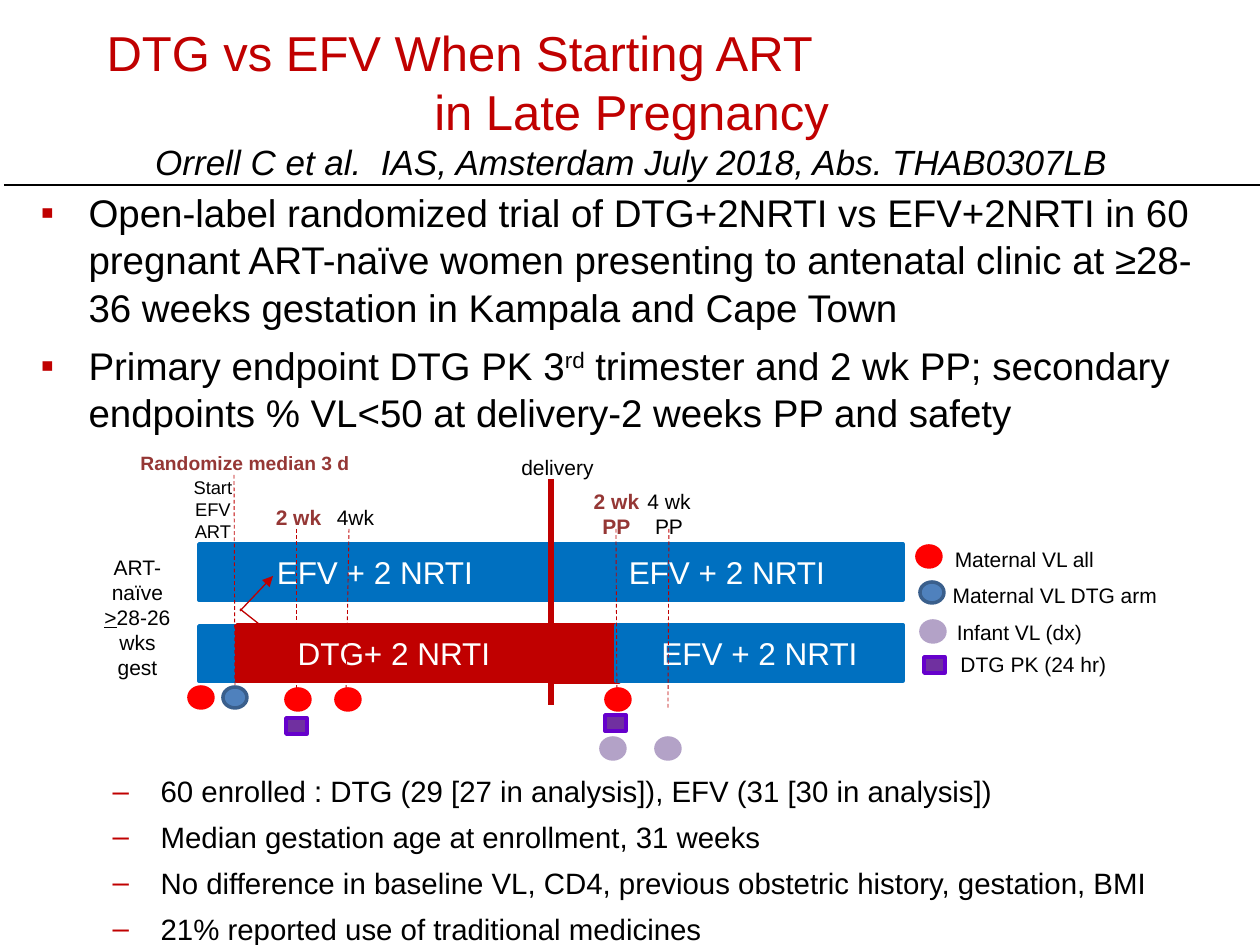
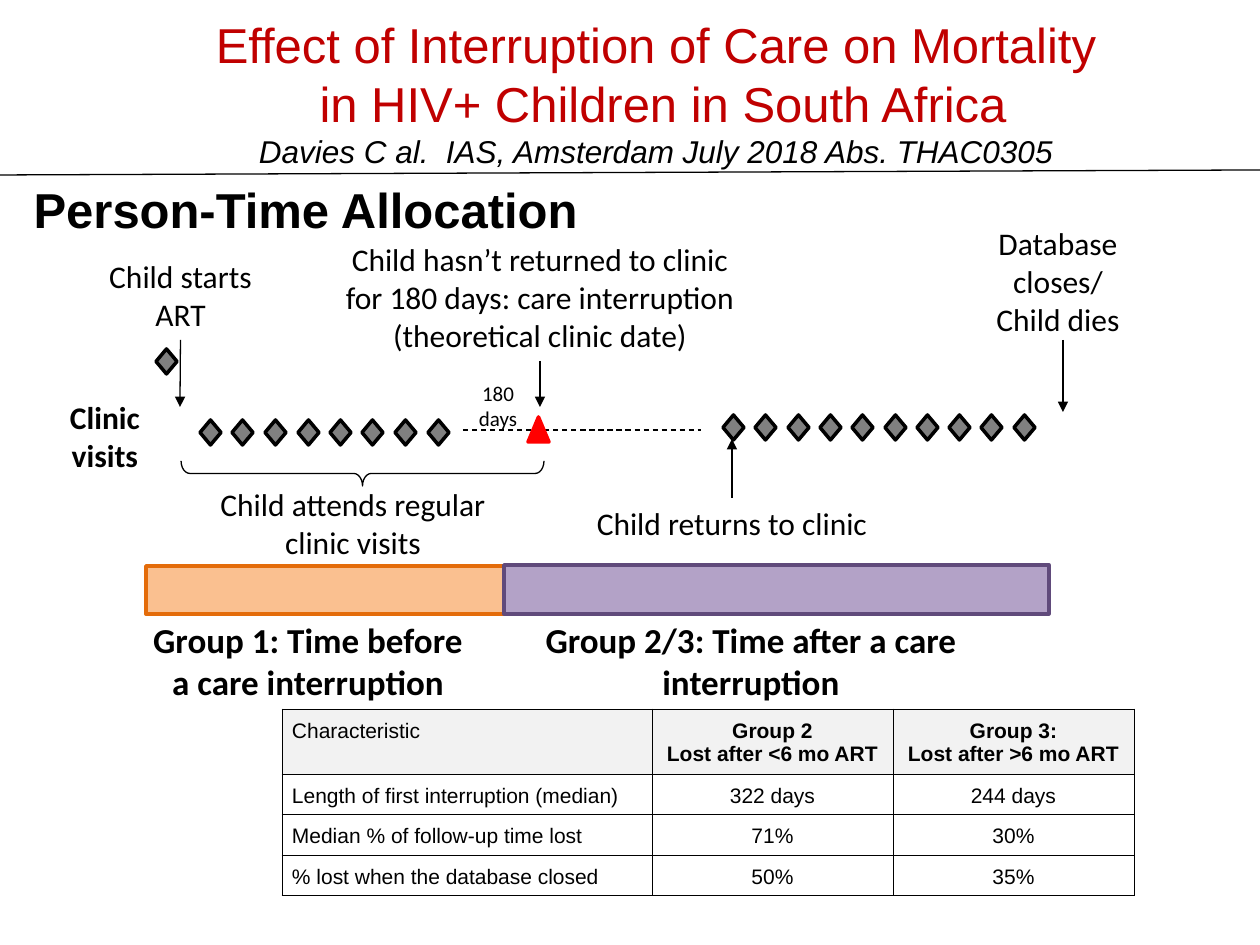
import copy
import lxml.etree
import pptx
import pptx.dml.color
import pptx.enum.dml
import pptx.enum.shapes
import pptx.enum.text
import pptx.oxml.ns
import pptx.util

PX = 7257
RED, BLUE, BLACK, WHITE = "C00000", "0070C0", "000000", "FFFFFF"
BRIGHT_RED, MAROON, LILAC, GREY = "FF0000", "953735", "B3A2C7", "808080"

qn = pptx.oxml.ns.qn
rgb = pptx.dml.color.RGBColor.from_string
ALIGN = pptx.enum.text.PP_ALIGN
MIDDLE = pptx.enum.text.MSO_ANCHOR.MIDDLE
TOP = pptx.enum.text.MSO_ANCHOR.TOP
SHAPE = pptx.enum.shapes.MSO_SHAPE
STRAIGHT = pptx.enum.shapes.MSO_CONNECTOR.STRAIGHT


def write(frame, text, size, color, font="Arial", bold=False, align=ALIGN.CENTER):
    frame.text = text
    for paragraph in frame.paragraphs:
        paragraph.alignment = align
        for run in paragraph.runs:
            run.font.name = font
            run.font.size = pptx.util.Pt(size)
            run.font.bold = bold
            run.font.color.rgb = rgb(color)


def add_shape(slide, kind, box, fill, line, width=2):
    shape = slide.shapes.add_shape(kind, *[value * PX for value in box])
    shape.shadow.inherit = False
    if fill:
        shape.fill.solid()
        shape.fill.fore_color.rgb = rgb(fill)
    else:
        shape.fill.background()
    shape.line.color.rgb = rgb(line)
    shape.line.width = pptx.util.Pt(width)
    return shape


presentation = pptx.Presentation()
presentation.slide_width = pptx.util.Inches(10)
presentation.slide_height = pptx.util.Inches(7.5)
trial = presentation.slides.add_slide(presentation.slide_layouts[3])
care = presentation.slides.add_slide(presentation.slide_layouts[5])

section = care.shapes.title
section.left, section.top, section.width, section.height = [v * PX for v in (-34, 130, 679, 158)]
write(section.text_frame, "Person-Time Allocation", 28, BLACK, bold=True)
care_header = care.shapes.add_textbox(0, 0, 0, 0)

headers = [
    (trial.shapes.title, (87, 11, 1082, 183), 20,
     "DTG vs EFV When Starting ART\nin Late Pregnancy\n"
     "Orrell C et al.  IAS, Amsterdam July 2018, Abs. THAB0307LB"),
    (care_header, (42, 13, 1228, 158), 18,
     "Effect of Interruption of Care on Mortality\nin HIV+ Children in South Africa\n"
     "Davies C al.  IAS, Amsterdam July 2018 Abs. THAC0305"),
]
for shape, box, citation_size, text in headers:
    shape.left, shape.top, shape.width, shape.height = [value * PX for value in box]
    write(shape.text_frame, text, 28, RED)
    citation = shape.text_frame.paragraphs[-1].runs[0]
    citation.font.size = pptx.util.Pt(citation_size)
    citation.font.italic = True
    citation.font.color.rgb = rgb(BLACK)
for shape in (section, trial.shapes.title, care_header):
    shape.text_frame.word_wrap = True
    shape.text_frame.auto_size = pptx.enum.text.MSO_AUTO_SIZE.NONE
    shape.text_frame.vertical_anchor = MIDDLE
first_line = trial.shapes.title.text_frame.paragraphs[0]
first_line.alignment = ALIGN.LEFT
first_line._p.get_or_add_pPr().set("marL", str(7 * PX))
care_header.text_frame.paragraphs[1]._p.get_or_add_pPr().set("marL", str(14 * PX))

lists = [
    (1, (28, 181, 1202, 286), 22, 1.03, "▪",
     "Open-label randomized trial of DTG+2NRTI vs EFV+2NRTI in 60 pregnant ART-naïve women "
     "presenting to antenatal clinic at ≥28-36 weeks gestation in Kampala and Cape Town\n"
     "Primary endpoint DTG PK 3rd trimester and 2 wk PP; secondary endpoints "
     "% VL<50 at delivery-2 weeks PP and safety"),
    (2, (100, 767, 1139, 164), 16.8, 1, "‒",
     "60 enrolled : DTG (29 [27 in analysis]), EFV (31 [30 in analysis])\n"
     "Median gestation age at enrollment, 31 weeks\n"
     "No difference in baseline VL, CD4, previous obstetric history, gestation, BMI\n"
     "21% reported use of traditional medicines"),
]
for index, box, size, spacing, bullet, text in lists:
    body = trial.placeholders[index]
    body.left, body.top, body.width, body.height = [value * PX for value in box]
    write(body.text_frame, text, size, BLACK, align=ALIGN.LEFT)
    body.text_frame.auto_size = pptx.enum.text.MSO_AUTO_SIZE.NONE
    for number, paragraph in enumerate(body.text_frame.paragraphs):
        properties = paragraph._p.get_or_add_pPr()
        properties.set("marL", str(48 * PX))
        properties.set("indent", str(-48 * PX))
        bullet_color = lxml.etree.SubElement(properties, qn("a:buClr"))
        lxml.etree.SubElement(bullet_color, qn("a:srgbClr")).set("val", RED)
        lxml.etree.SubElement(properties, qn("a:buFont")).set("typeface", "Arial")
        lxml.etree.SubElement(properties, qn("a:buChar")).set("char", bullet)
        paragraph.line_spacing = spacing
        paragraph.space_before = pptx.util.Pt(6 if number else 0)

bars = [
    (trial, (552, 625, 67, 57), RED, RED, ""),
    (trial, (199, 544, 352, 56), BLUE, BLUE, "EFV + 2 NRTI"),
    (trial, (551, 544, 352, 56), BLUE, BLUE, "EFV + 2 NRTI"),
    (trial, (199, 626, 38, 55), BLUE, BLUE, ""),
    (trial, (237, 625, 314, 56), RED, RED, "DTG+ 2 NRTI"),
    (trial, (616, 625, 287, 56), BLUE, BLUE, "EFV + 2 NRTI"),
    (care, (146, 566, 360, 48), "FAC090", "E46C0A", ""),
    (care, (504, 565, 545, 49), LILAC, "604A7B", ""),
]
for slide, box, fill, line, text in bars:
    bar = add_shape(slide, SHAPE.RECTANGLE, box, fill, line)
    if text:
        write(bar.text_frame, text, 18, WHITE)
        bar.text_frame.vertical_anchor = MIDDLE

trial_labels = [
    ((944, 645, 179, 35), "DTG PK (24 hr)", 12, BLACK),
    ((937, 576, 236, 35), "Maternal VL DTG arm", 12, BLACK),
    ((930, 613, 179, 35), "Infant VL (dx)", 12, BLACK),
    ((935, 540, 179, 35), "Maternal VL all", 12, BLACK),
    ((181, 470, 64, 73), "Start\nEFV\nART", 10.5, BLACK),
    ((127, 445, 236, 33), "Randomize median 3 d", 11, MAROON),
    ((263, 498, 71, 35), "2 wk", 12, MAROON),
    ((324, 498, 63, 35), "4wk", 12, BLACK),
    ((581, 482, 71, 58), "2 wk\nPP", 12, MAROON),
    ((635, 482, 68, 58), "4 wk\nPP", 12, BLACK),
    ((507, 448, 101, 35), "delivery", 12, BLACK),
    ((92, 548, 91, 152), "ART-\nnaïve\n>28-26\nwks\ngest", 12, BLACK),
]
for box, text, size, color in trial_labels:
    label = trial.shapes.add_textbox(*[value * PX for value in box])
    label.text_frame.word_wrap = False
    write(label.text_frame, text, size, color, bold=color == MAROON)
gestation = label.text_frame.paragraphs[2]
endpoint = trial.placeholders[1].text_frame.paragraphs[1]
for paragraph, pieces in (
    (gestation, [">", "28-26"]),
    (endpoint, ["Primary endpoint DTG PK 3", "rd", endpoint.text.split("3rd")[1]]),
):
    for piece in pieces[1:]:
        paragraph.runs[0]._r.addnext(copy.deepcopy(paragraph.runs[0]._r))
    for run, piece in zip(paragraph.runs, pieces):
        run.text = piece
gestation.runs[0].font.underline = True
endpoint.runs[1]._r.get_or_add_rPr().set("baseline", "30000")

care_labels = [
    ("start", (77, 251, 207, 89), "Child starts ART", 18, False, TOP),
    ("before", (132, 612, 352, 97), "Group 1: Time before a care interruption", 20, True, TOP),
    ("attend", (208, 479, 290, 89), "Child attends regular clinic visits", 18, False, TOP),
    ("visits", (47, 412, 116, 48), "Clinic visits", 18, True, MIDDLE),
    ("close", (970, 257, 176, 48), "Database closes/ Child dies", 18, False, MIDDLE),
    ("return", (557, 498, 350, 50), "Child returns to clinic", 18, False, TOP),
    ("after", (525, 612, 452, 97), "Group 2/3: Time after a care interruption", 20, True, TOP),
    ("absent", (320, 234, 440, 127),
     "Child hasn’t returned to clinic for 180 days: care interruption (theoretical clinic date)",
     18, False, TOP),
    ("gap", (464, 382, 68, 47), "180 days", 12, False, MIDDLE),
]
care_boxes = {}
for name, box, text, size, bold, anchor in care_labels:
    label = care.shapes.add_textbox(*[value * PX for value in box])
    label.text_frame.word_wrap = True
    label.text_frame.vertical_anchor = anchor
    write(label.text_frame, text, size, BLACK, "Calibri", bold)
    care_boxes[name] = label

lines = [
    (trial, (4, 185, 1264, 185), BLACK, 0.75, "", None),
    (trial, (296, 529, 296, 699), RED, 0.5, "dash", None),
    (trial, (349, 529, 346, 697), RED, 0.5, "dash", None),
    (trial, (616, 529, 617, 700), RED, 0.5, "dash", None),
    (trial, (669, 529, 668, 710), RED, 0.5, "dash", None),
    (trial, (234, 475, 235, 689), RED, 0.5, "dash", None),
    (trial, (240, 611, 273, 576), RED, 0.75, "arrow", None),
    (trial, (240, 609, 278, 639), RED, 0.75, "arrow", None),
    (trial, (551, 479, 551, 705), RED, 3, "", None),
    (care, (0, 175, 1260, 170), BLACK, 0.75, "", None),
    (care, (180, 340, 180, 407), BLACK, 0.75, "arrow", ("start", 2)),
    (care, (1063, 340, 1063, 412), BLACK, 0.75, "arrow", None),
    (care, (732, 498, 732, 439), BLACK, 0.75, "arrow", ("return", 0)),
    (care, (540, 361, 540, 407), BLACK, 0.75, "arrow", ("absent", 2)),
    (care, (463, 430, 701, 430), BLACK, 0.75, "dash", None),
]
for slide, ends, color, width, style, joint in lines:
    connector = slide.shapes.add_connector(STRAIGHT, *[value * PX for value in ends])
    connector.line.color.rgb = rgb(color)
    connector.line.width = pptx.util.Pt(width)
    if joint:
        connector.begin_connect(care_boxes[joint[0]], joint[1])
    if style == "dash":
        connector.line.dash_style = pptx.enum.dml.MSO_LINE.DASH
    properties = connector.element.spPr
    if style == "arrow":
        outline = properties.find(qn("a:ln"))
        lxml.etree.SubElement(outline, qn("a:tailEnd")).set("type", "triangle")
    lxml.etree.SubElement(properties, qn("a:effectLst"))

markers = [
    (SHAPE.OVAL, 24, 21, BRIGHT_RED, BRIGHT_RED,
     [(917, 546), (189, 687), (286, 689), (336, 689), (606, 689)]),
    (SHAPE.OVAL, 24, 21, "4F81BD", "3A5F8C", [(920, 582), (223, 687)]),
    (SHAPE.OVAL, 24, 21, LILAC, LILAC, [(921, 621), (601, 738), (656, 738)]),
    (SHAPE.RECTANGLE, 21, 16, "7030A0", "6600CC", [(924, 657), (286, 718), (605, 715)]),
]
for kind, width, height, fill, line, places in markers:
    for left, top in places:
        add_shape(trial, kind, (left, top, width, height), fill, line)

visits = [(156, 349)]
visits += [(200 + round(32.5 * step), 420) for step in range(8)]
visits += [(723 + round(32.3 * step), 415) for step in range(10)]
for left, top in visits:
    add_shape(care, SHAPE.DIAMOND, (left, top, 21, 25), GREY, BLACK)
add_shape(care, SHAPE.ISOSCELES_TRIANGLE, (528, 417, 21, 25), BRIGHT_RED, BRIGHT_RED)
brace = add_shape(care, SHAPE.RIGHT_BRACE, (350, 292, 25, 363), None, BLACK, 0.75)
brace.rotation = 90
brace.adjustments[0] = 0.35

rows = [
    ("Characteristic", "Group 2\nLost after <6 mo ART", "Group 3:\nLost after >6 mo ART"),
    ("Length of first interruption (median)", "322 days", "244 days"),
    ("Median % of follow-up time lost", "71%", "30%"),
    ("% lost when the database closed", "50%", "35%"),
]
table = care.shapes.add_table(4, 3, *[v * PX for v in (282, 709, 852, 186)]).table
table.first_row = False
table.horz_banding = False
for column, width in zip(table.columns, (370, 241, 241)):
    column.width = width * PX
for row, height in zip(table.rows, (65, 40, 41, 40)):
    row.height = height * PX
for row_index, row in enumerate(rows):
    for column_index, text in enumerate(row):
        cell = table.cell(row_index, column_index)
        cell.margin_left = cell.margin_right = cell.margin_top = 10 * PX
        cell.margin_bottom = 5 * PX
        write(cell.text_frame, text, 12, BLACK, bold=row_index == 0 and column_index > 0,
              align=ALIGN.CENTER if column_index else ALIGN.LEFT)
        properties = cell._tc.get_or_add_tcPr()
        for side in ("lnL", "lnR", "lnT", "lnB"):
            border = lxml.etree.SubElement(properties, qn("a:" + side))
            border.set("w", str(pptx.util.Pt(0.5)))
            border_fill = lxml.etree.SubElement(border, qn("a:solidFill"))
            lxml.etree.SubElement(border_fill, qn("a:srgbClr")).set("val", BLACK)
        cell.fill.solid()
        cell.fill.fore_color.rgb = rgb(WHITE if row_index else "F2F2F2")

presentation.save("out.pptx")
